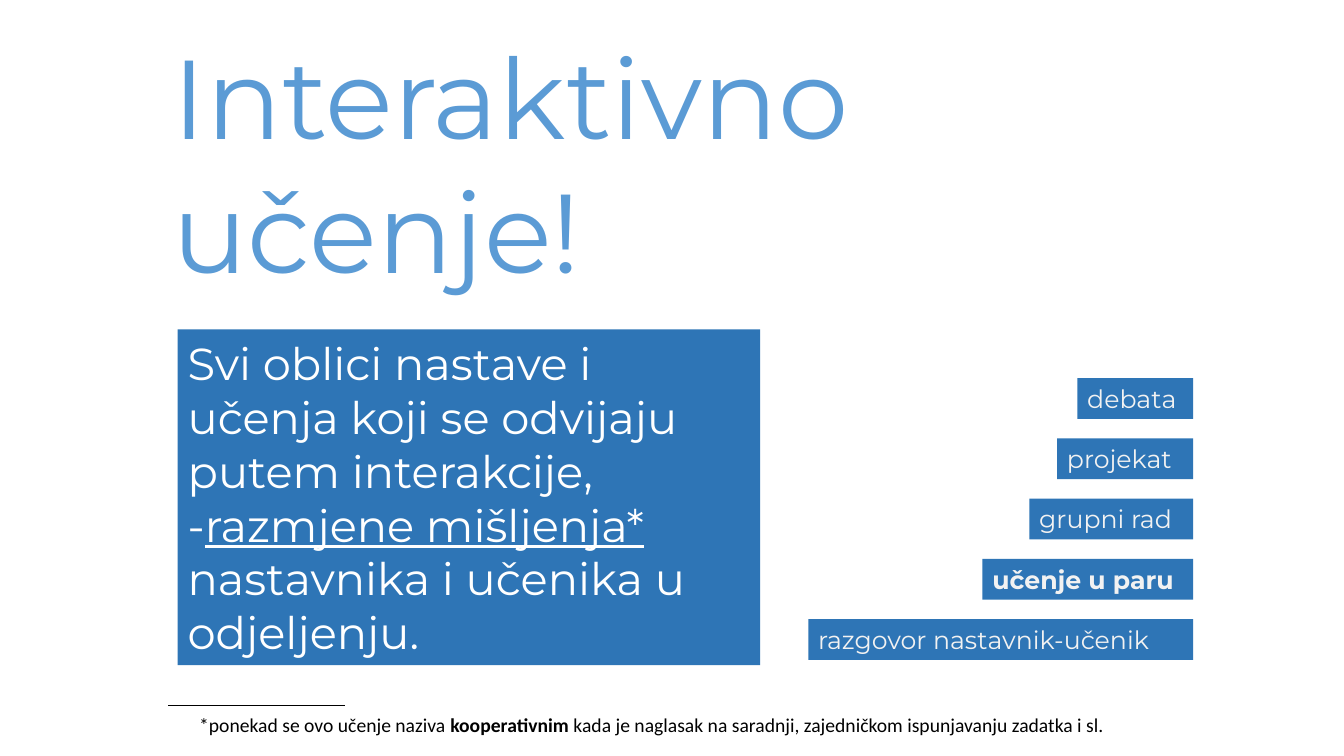
from dataclasses import dataclass

from lxml import etree
from pptx import Presentation
from pptx.dml.color import RGBColor
from pptx.enum.shapes import MSO_CONNECTOR, MSO_SHAPE
from pptx.enum.text import MSO_ANCHOR, MSO_AUTO_SIZE, PP_ALIGN
from pptx.oxml.ns import qn
from pptx.util import Cm, Pt

RECT = MSO_SHAPE.RECTANGLE
STRAIGHT = MSO_CONNECTOR.STRAIGHT
TOP, MIDDLE = MSO_ANCHOR.TOP, MSO_ANCHOR.MIDDLE
GROW = MSO_AUTO_SIZE.SHAPE_TO_FIT_TEXT
LEFT = PP_ALIGN.LEFT


@dataclass(frozen=True)
class Theme:
    """Colours, fonts and type sizes of the slide."""
    panel: str = "2E75B6"
    heading: str = "5B9BD5"
    white: str = "FFFFFF"
    label: str = "F2F2F2"
    black: str = "000000"
    font: str = "Montserrat"
    note_font: str = "Calibri"
    heading_size: int = 80
    body_size: int = 32
    label_size: int = 18
    note_size: int = 14
    rule_width: float = 0.5


THEME = Theme()


def add_run(p, text, font=THEME.font, size=18, color=THEME.black, bold=False, underline=False):
    """Append a formatted run to a paragraph."""
    r = p.add_run()
    r.text = text
    r.font.name = font
    r.font.size = Pt(size)
    r.font.color.rgb = RGBColor.from_string(color)
    r.font.bold = bold
    r.font.underline = underline


def set_frame(sp, wrap=True, anchor=TOP):
    """Prepare a shape's text frame and return its first paragraph."""
    tf = sp.text_frame
    tf.word_wrap = wrap
    tf.auto_size = GROW
    tf.vertical_anchor = anchor
    p = tf.paragraphs[0]
    p.alignment = LEFT
    return p


def add_panel(slide, x, y, w, h):
    """Draw a plain blue rectangle."""
    sp = slide.shapes.add_shape(RECT, Cm(x), Cm(y), Cm(w), Cm(h))
    sp.shadow.inherit = False
    sp.fill.solid()
    sp.fill.fore_color.rgb = RGBColor.from_string(THEME.panel)
    sp.line.fill.background()
    return sp


def add_heading(slide, x, y, w, h):
    """Place the large heading."""
    sp = slide.shapes.add_textbox(Cm(x), Cm(y), Cm(w), Cm(h))
    p = set_frame(sp)
    add_run(p, "Interaktivno učenje!", size=THEME.heading_size, color=THEME.heading)


def add_definition(slide, x, y, w, h):
    """Place the definition panel."""
    p = set_frame(add_panel(slide, x, y, w, h), anchor=MIDDLE)
    style = {"size": THEME.body_size, "color": THEME.white}
    add_run(p, "Svi oblici nastave i učenja koji se odvijaju putem interakcije, -", **style)
    add_run(p, "razmjene mišljenja* ", underline=True, **style)
    add_run(p, "nastavnika i učenika u odjeljenju.", **style)


def add_forms(slide, x, y, w, h):
    """Stack the right-aligned labels evenly in the box."""
    forms = [("debata", 2.92, False), ("projekat", 3.43, False), ("grupni rad", 4.13, False),
             ("učenje u paru", 5.31, True), ("razgovor nastavnik-učenik", w, False)]
    label_h = 1.03
    pitch = (h - label_h) / (len(forms) - 1)
    for i, (text, label_w, bold) in enumerate(forms):
        sp = add_panel(slide, x + w - label_w, y + i * pitch, label_w, label_h)
        p = set_frame(sp, wrap=False)
        add_run(p, text, size=THEME.label_size, color=THEME.label, bold=bold)


def add_footnote(slide, x, y, w, h):
    """Place the footnote under its short rule."""
    rule = slide.shapes.add_connector(STRAIGHT, Cm(x), Cm(y), Cm(x + 4.45), Cm(y))
    rule.line.color.rgb = RGBColor.from_string(THEME.black)
    rule.line.width = Pt(THEME.rule_width)
    etree.SubElement(rule.line._get_or_add_ln().getparent(), qn("a:effectLst"))
    indent = 0.53
    sp = slide.shapes.add_textbox(Cm(x + indent), Cm(y + 0.05), Cm(w - indent), Cm(h))
    p = set_frame(sp, wrap=False)
    style = {"font": THEME.note_font, "size": THEME.note_size}
    add_run(p, "*ponekad se ovo učenje naziva ", **style)
    add_run(p, "kooperativnim", bold=True, **style)
    add_run(p, " kada je naglasak na saradnji, zajedničkom ispunjavanju zadatka i sl.", **style)


def main():
    """Build and save the slide."""
    prs = Presentation()
    prs.slide_width, prs.slide_height = Cm(33.87), Cm(19.05)
    slide = prs.slides.add_slide(prs.slide_layouts[6])
    add_definition(slide, 4.48, 8.3, 14.68, 8.46)
    add_forms(slide, 20.37, 9.53, 9.7, 7.1)
    add_footnote(slide, 4.24, 17.78, 23.98, 0.86)
    add_heading(slide, 4.1, 0.56, 22.8, 7.09)
    prs.save("out.pptx")


if __name__ == "__main__":
    main()
